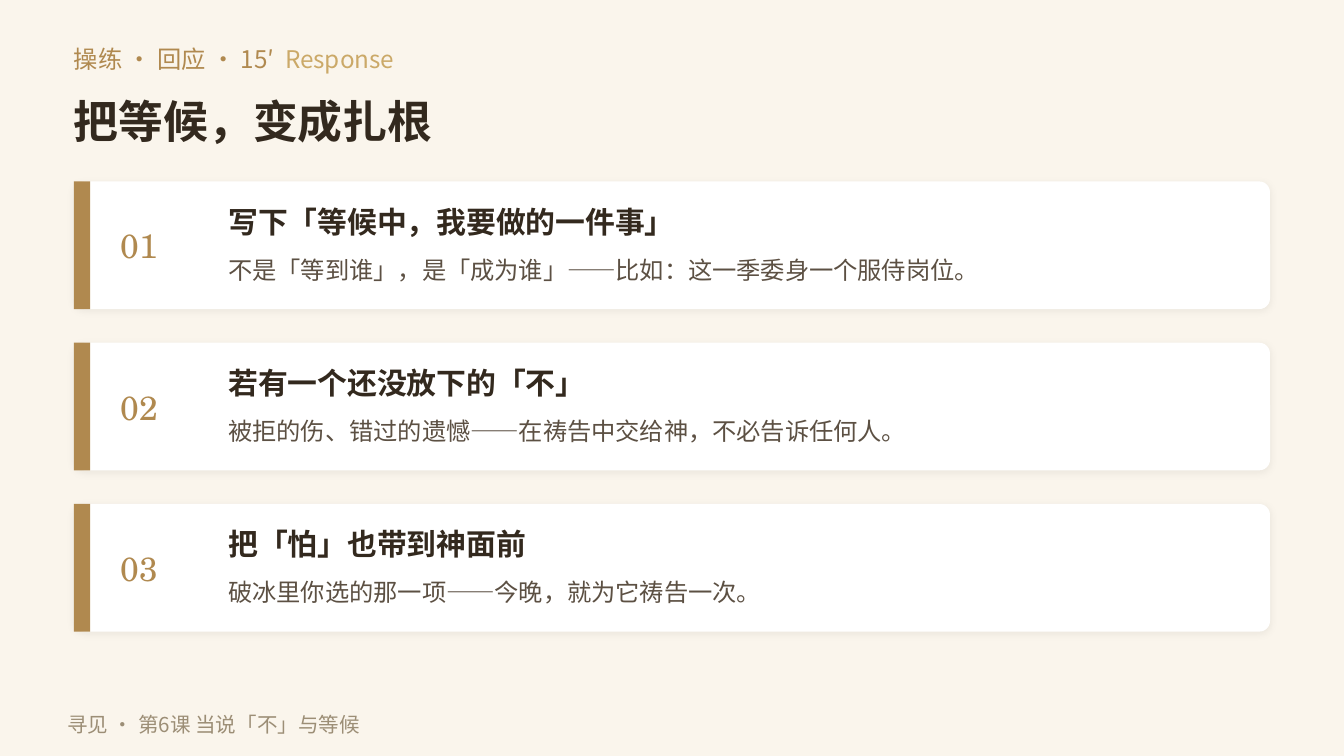
import pptx
import pptx.dml.color
import pptx.enum.shapes
import pptx.enum.text
import pptx.oxml
import pptx.oxml.ns
import pptx.util

Inches = pptx.util.Inches
RGBColor = pptx.dml.color.RGBColor
SHAPES = pptx.enum.shapes.MSO_SHAPE

CREAM = RGBColor(0xFA, 0xF5, 0xEC)
WHITE = RGBColor(0xFF, 0xFF, 0xFF)
GOLD = RGBColor(0xB0, 0x89, 0x4F)
LIGHT_GOLD = RGBColor(0xCB, 0xA9, 0x68)
INK = RGBColor(0x33, 0x29, 0x1E)
BROWN = RGBColor(0x5C, 0x50, 0x43)
TAUPE = RGBColor(0x9C, 0x8E, 0x76)

SANS = "Noto Sans CJK SC"
SERIF = "TeX Gyre Schola"

SLIDE_WIDTH = 10
SLIDE_HEIGHT = SLIDE_WIDTH * 9 / 16
LEFT = 0.55
FIRST_CARD_TOP = 1.35
CARD_STEP = 1.2
CARD_WIDTH = 8.9
CARD_HEIGHT = 0.95
CORNER_RADIUS = 0.08

STEPS = [
    ("写下「等候中，我要做的一件事」",
     "不是「等到谁」，是「成为谁」——比如：这一季委身一个服侍岗位。"),
    ("若有一个还没放下的「不」",
     "被拒的伤、错过的遗憾——在祷告中交给神，不必告诉任何人。"),
    ("把「怕」也带到神面前",
     "破冰里你选的那一项——今晚，就为它祷告一次。"),
]


def add_block(slide, kind, left, top, width, height, color):
    block = slide.shapes.add_shape(
        kind, Inches(left), Inches(top), Inches(width), Inches(height))
    block.shadow.inherit = False
    block.fill.solid()
    block.fill.fore_color.rgb = color
    block.line.fill.background()
    return block


def add_soft_shadow(card):
    effects = card._element.spPr.find(pptx.oxml.ns.qn("a:effectLst"))
    effects.append(pptx.oxml.parse_xml(
        f'<a:outerShdw {pptx.oxml.ns.nsdecls("a")} blurRad="{pptx.util.Pt(4)}" '
        f'dist="{pptx.util.Pt(1)}" dir="{135 * 60000}" algn="bl" rotWithShape="0">'
        '<a:srgbClr val="000000"><a:alpha val="6000"/></a:srgbClr></a:outerShdw>'))


def style_run(run, size, color, typeface, bold):
    run.font.size = pptx.util.Pt(size)
    run.font.bold = bold
    run.font.color.rgb = color
    run.font.name = typeface
    run.font._element.find(pptx.oxml.ns.qn("a:latin")).addnext(
        pptx.oxml.parse_xml(
            f'<a:ea {pptx.oxml.ns.nsdecls("a")} typeface="{typeface}"/>'))


def add_label(slide, text, left, top, width, height, size, color,
              typeface=SANS, bold=False):
    label = slide.shapes.add_textbox(
        Inches(left), Inches(top), Inches(width), Inches(height))
    frame = label.text_frame
    frame.word_wrap = True
    frame.vertical_anchor = pptx.enum.text.MSO_ANCHOR.MIDDLE
    frame.margin_left = frame.margin_right = 0
    frame.margin_top = frame.margin_bottom = 0
    frame.text = text
    paragraph = frame.paragraphs[0]
    style_run(paragraph.runs[0], size, color, typeface, bold)
    return paragraph


def add_header(slide):
    eyebrow = add_label(slide, "操练 · 回应 · 15′ ", LEFT, 0.28, 8.5, 0.32, 13, GOLD)
    english = eyebrow.add_run()
    english.text = " Response"
    style_run(english, 13, LIGHT_GOLD, SANS, False)
    add_label(slide, "把等候，变成扎根", LEFT, 0.7, 9, 0.4, 24, INK, bold=True)


def add_step_card(slide, number, title, detail):
    top = FIRST_CARD_TOP + (number - 1) * CARD_STEP
    card = add_block(slide, SHAPES.ROUNDED_RECTANGLE,
                     LEFT, top, CARD_WIDTH, CARD_HEIGHT, WHITE)
    card.adjustments[0] = CORNER_RADIUS / CARD_HEIGHT
    add_soft_shadow(card)
    add_block(slide, SHAPES.RECTANGLE, LEFT, top, 0.12, CARD_HEIGHT, GOLD)
    add_label(slide, f"{number:02d}", 0.9, top + 0.15, 0.7, 0.65, 18, GOLD, SERIF)
    add_label(slide, title, 1.7, top + 0.12, 7.3, 0.35, 16, INK, bold=True)
    add_label(slide, detail, 1.7, top + 0.48, 7.3, 0.35, 13, BROWN)


def main():
    deck = pptx.Presentation()
    deck.slide_width = Inches(SLIDE_WIDTH)
    deck.slide_height = Inches(SLIDE_HEIGHT)
    slide = deck.slides.add_slide(deck.slide_layouts[6])
    add_block(slide, SHAPES.RECTANGLE, 0, 0, SLIDE_WIDTH, SLIDE_HEIGHT, CREAM)
    add_header(slide)
    for number, (title, detail) in enumerate(STEPS, start=1):
        add_step_card(slide, number, title, detail)
    add_label(slide, "寻见 · 第6课 当说「不」与等候", 0.5, 5.25, 7.5, 0.28, 11, TAUPE)
    deck.save("out.pptx")


if __name__ == "__main__":
    main()
